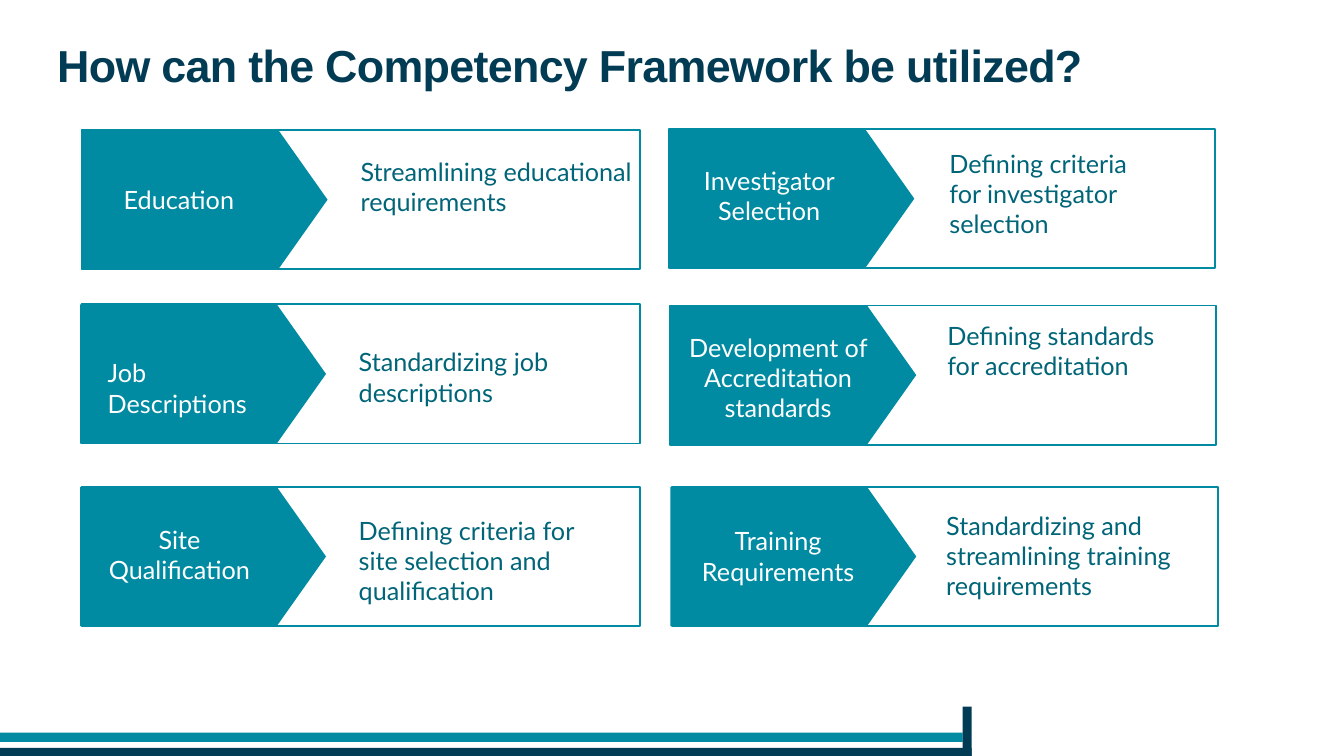
from pptx import Presentation
from pptx.dml.color import RGBColor
from pptx.enum.shapes import MSO_SHAPE as Shape
from pptx.enum.text import MSO_ANCHOR as Anchor, PP_ALIGN as Align
from pptx.util import Pt

NAVY = RGBColor(0x02, 0x3C, 0x54)
TEAL = RGBColor(0x00, 0x8B, 0xA2)
DEEP = RGBColor(0x00, 0x65, 0x78)
WHITE = RGBColor(0xFF, 0xFF, 0xFF)

CARD_H = 99.4
ARROW_W = 175.7
LEFT_W, RIGHT_W = 398.9, 389.8
MID, TOP = Anchor.MIDDLE, Anchor.TOP

# card box, arrow shift, label, label box, label align, label anchor, note, note box
CARDS = [
    ((58.3, 92.9, LEFT_W), 0, "Education", (6.5, 35.3, 126, 28.8),
     Align.CENTER, TOP, "Streamlining educational requirements", (192.2, 15.1, 208.1, 72.7)),
    ((58.3, 217.4, LEFT_W), -1.1, "Job Descriptions", (11.5, 34.6, 135.4, 51.1),
     Align.LEFT, TOP, "Standardizing job descriptions", (190.8, 26.6, 179.3, 51.1)),
    ((58.3, 347.8, LEFT_W), -1.1, "Site Qualification", (2.2, 23, 135.4, 51.1),
     Align.CENTER, TOP, "Defining criteria for site selection and qualification",
     (190.8, 16.6, 185.8, 72.7)),
    ((478.1, 92.2, RIGHT_W), -0.7, "Investigator Selection", (-5, 21.6, 152.6, 51.1),
     Align.CENTER, MID, "Defining criteria for investigator selection", (193, 10.1, 165.6, 72.7)),
    ((478.8, 218.2, RIGHT_W), 0, "Development of Accreditation standards",
     (0.7, 15.1, 152.6, 72.7), Align.CENTER, MID,
     "Defining standards for accreditation", (190.8, 7.2, 165.6, 72.7)),
    ((480.2, 347.8, RIGHT_W), -1.4, "Training Requirements", (-0.7, 23.8, 152.6, 51.1),
     Align.CENTER, MID, "Standardizing and streamlining training requirements",
     (188.6, 13, 191.5, 72.7)),
]


def add_box(slide, kind, box, fill=None, line=None):
    shape = slide.shapes.add_shape(kind, *map(Pt, box))
    shape.shadow.inherit = False
    if fill is None:
        shape.fill.background()
    else:
        shape.fill.solid()
        shape.fill.fore_color.rgb = fill
    if line is None:
        shape.line.fill.background()
    else:
        shape.line.color.rgb = line
        shape.line.width = Pt(1.25)
    return shape


def add_text(slide, box, text, color, align=Align.LEFT, anchor=TOP, **style):
    frame = slide.shapes.add_textbox(*map(Pt, box)).text_frame
    frame.word_wrap = True
    frame.vertical_anchor = anchor
    para = frame.paragraphs[0]
    para.alignment = align
    run = para.add_run()
    run.text = text
    look = {"name": "Lato", "size": Pt(18), **style}
    for key, value in look.items():
        setattr(run.font, key, value)
    run.font.color.rgb = color
    return para


def add_title(slide, box):
    para = add_text(slide, box, "How can the Competency Framework be utilized?",
                    NAVY, name="Arial", size=Pt(32), bold=True)
    para.line_spacing = 0.85
    para.runs[0].font._element.set("spc", "-50")


def add_card(slide, box, shift, label, label_box, align, anchor, note, note_box):
    left, top, width = box
    add_box(slide, Shape.RECTANGLE, (left, top, width, CARD_H), line=TEAL)
    inset = (ARROW_W - CARD_H) / 2
    arrow = add_box(slide, Shape.FLOWCHART_OFFPAGE_CONNECTOR,
                    (left + shift + inset, top - inset, CARD_H, ARROW_W), fill=TEAL)
    arrow.rotation = 270

    def place(part):
        x, y, w, h = part
        return left + x, top + y, w, h

    add_text(slide, place(label_box), label, WHITE, align, anchor)
    add_text(slide, place(note_box), note, DEEP)


def add_footer(slide, box):
    left, top, width, height = box
    bar = 6.5
    base = top + height
    for part, color in [
        ((left, base - 5.8, width, 5.8), NAVY),
        ((left, base - 16.6, width - bar, bar), TEAL),
        ((left + width - bar, top, bar, height), NAVY),
    ]:
        add_box(slide, Shape.RECTANGLE, part, fill=color)


def main():
    deck = Presentation()
    deck.slide_width, deck.slide_height = Pt(960), Pt(540)
    slide = deck.slides.add_slide(deck.slide_layouts[6])
    add_footer(slide, (0, 504.7, 694.1, 35.3))
    add_title(slide, (33.8, 29.5, 802, 80.6))
    for card in CARDS:
        add_card(slide, *card)
    deck.save("out.pptx")


if __name__ == "__main__":
    main()
